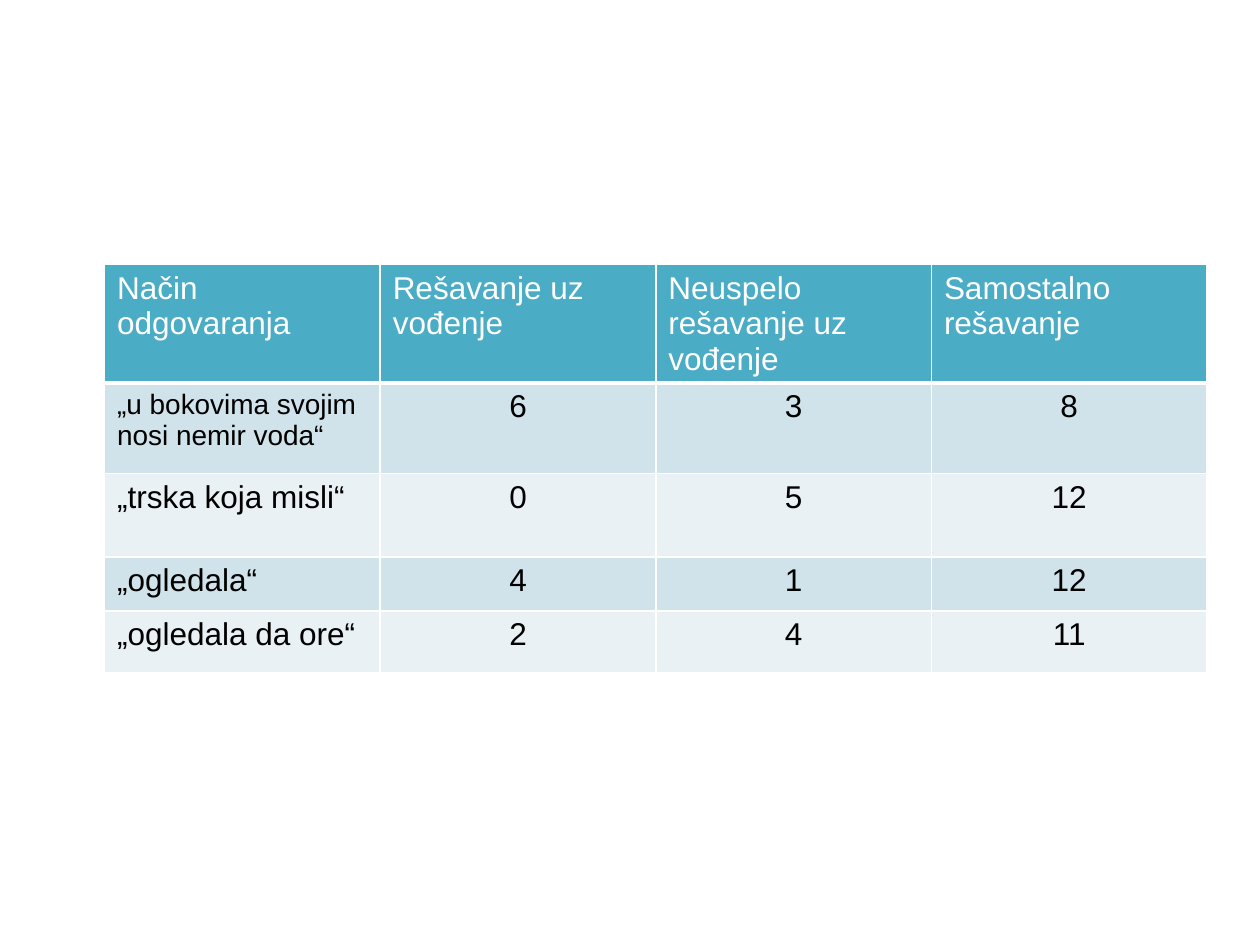
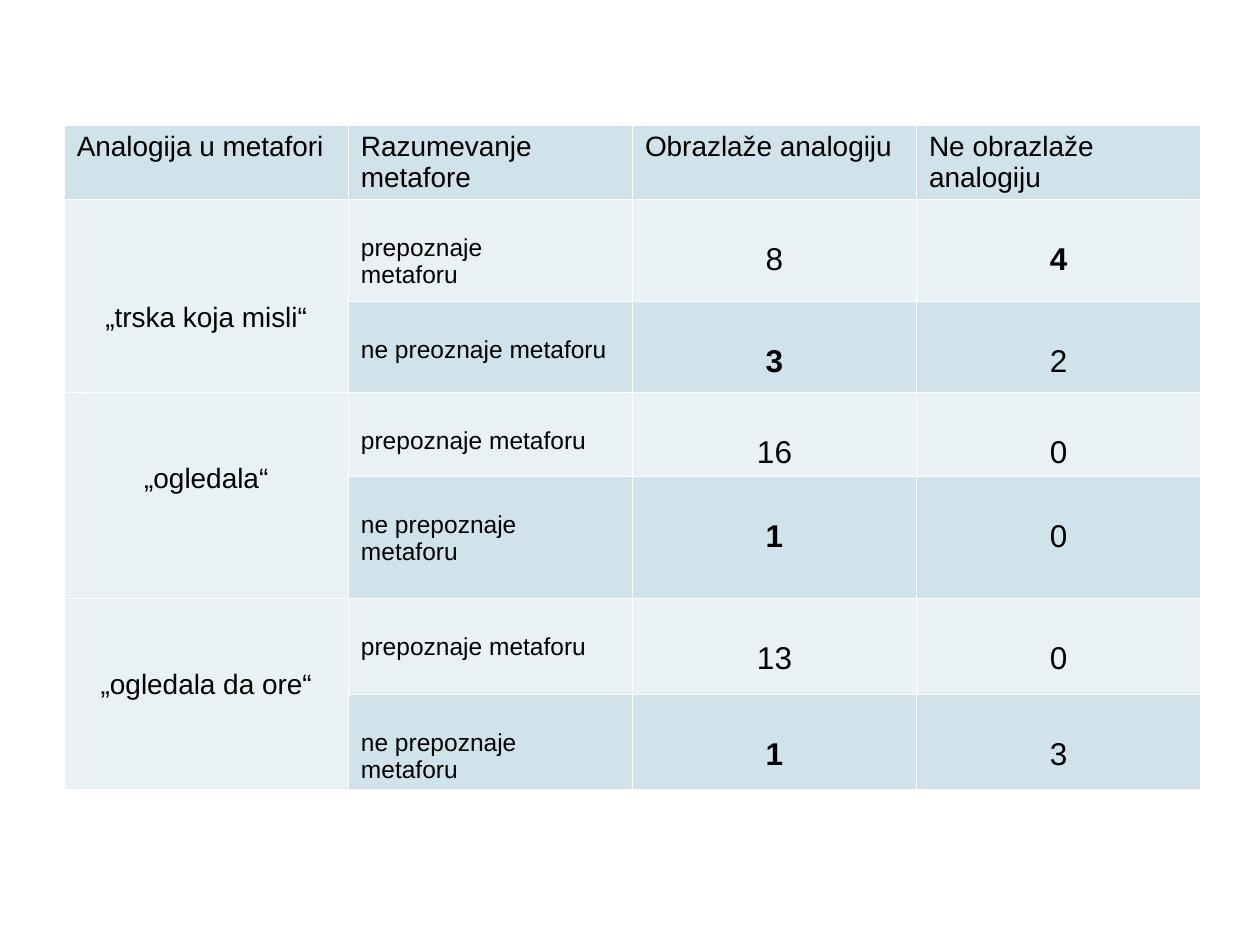
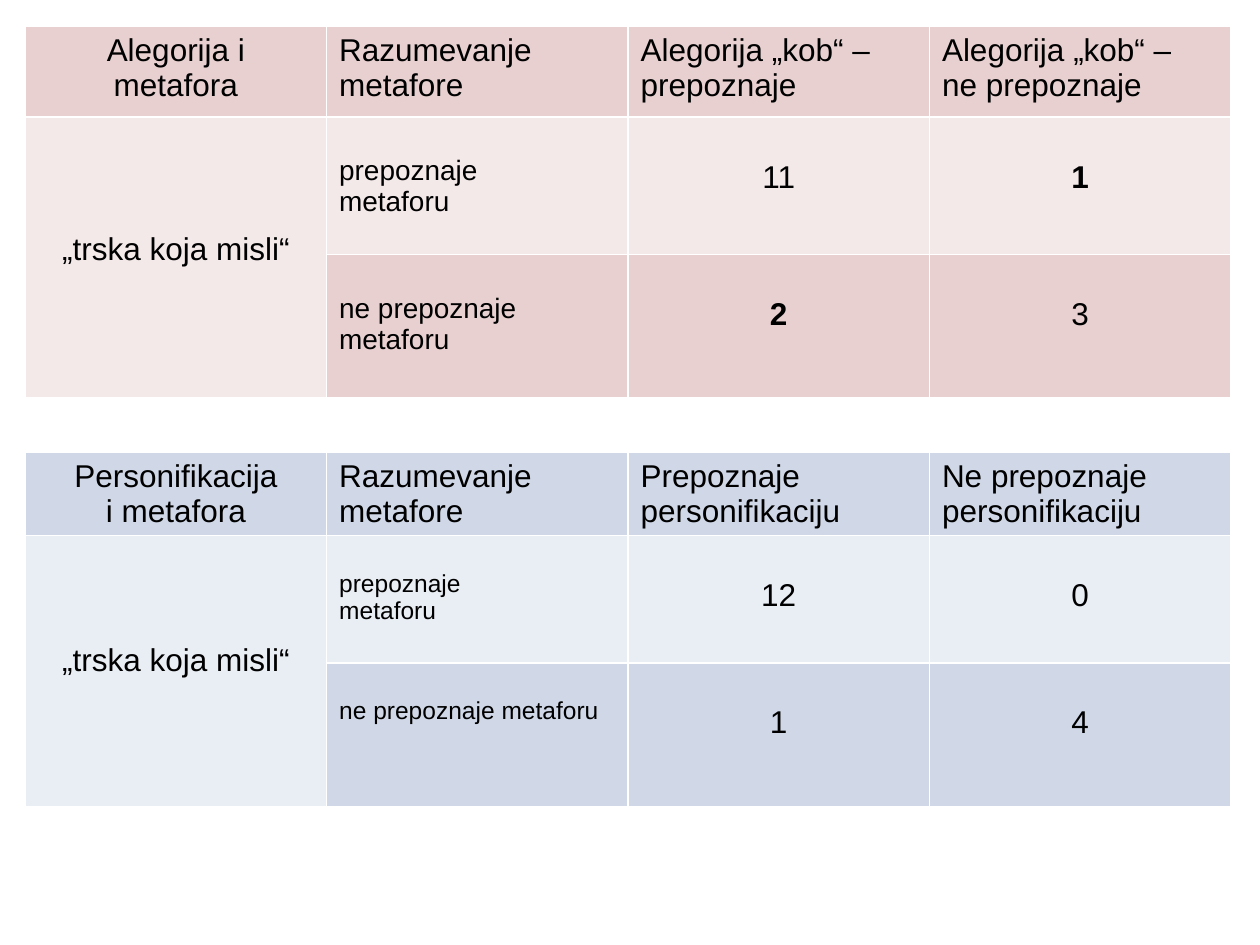
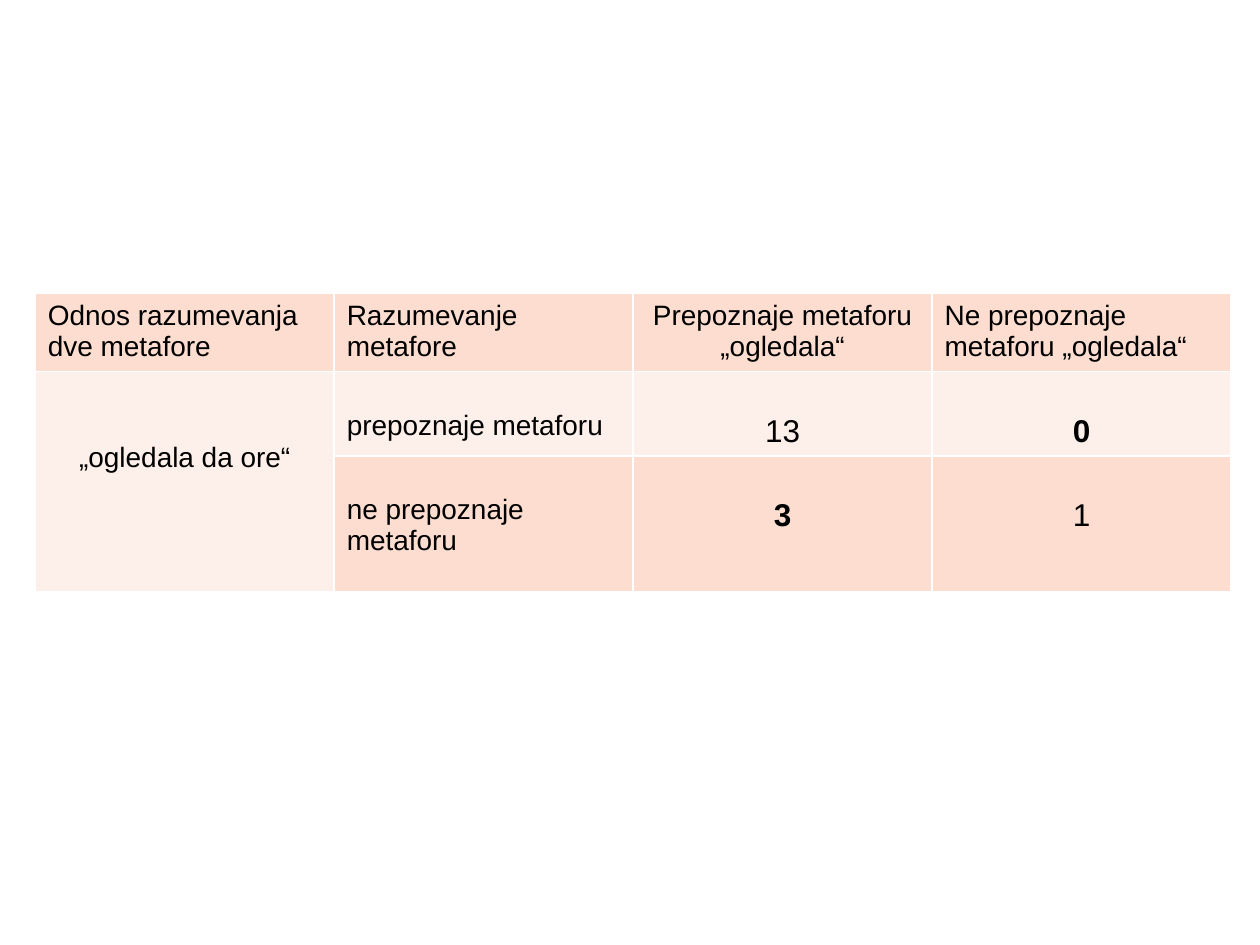
from dataclasses import dataclass
from typing import Optional

from lxml.etree import SubElement
from pptx import Presentation
from pptx.dml.color import RGBColor as Color
from pptx.enum.text import PP_ALIGN as Align
from pptx.oxml.ns import qn
from pptx.util import Inches, Pt

GRID_COLUMNS, GRID_ROWS = 100, 75
TABLE_COLUMNS = 4


@dataclass(frozen=True)
class Palette:
    dark: str
    light: str


@dataclass(frozen=True)
class Theme:
    font: str = "Arial"
    ink: str = "000000"
    paper: str = "FFFFFF"
    accent: str = "4BACC6"
    teal: Palette = Palette("D0E3EA", "E9F1F5")
    rose: Palette = Palette("E8D0D0", "F4E9E9")
    blue: Palette = Palette("D0D8E8", "E9EDF4")
    peach: Palette = Palette("FCDDCF", "FDEFE9")
    large: int = 18
    medium: int = 16
    small: int = 14
    line_height: float = 1.15
    thin_border: int = 1
    thick_border: int = 3


@dataclass
class Entry:
    """One table cell; lead is the space above its text, in lines."""
    text: str
    size: int
    fill: str
    ink: str = Theme.ink
    centred: bool = False
    bold: bool = False
    lead: float = 0
    row_span: int = 1


@dataclass
class Group:
    """A metaphor with its (understanding, first count, second count) rows."""
    metaphor: str
    lead: float
    rows: list


class Deck:
    def __init__(self, theme):
        self.theme = theme
        self.presentation = Presentation()
        self.presentation.slide_width = Inches(10)
        self.presentation.slide_height = Inches(7.5)
        self.column = self.presentation.slide_width / GRID_COLUMNS
        self.row = self.presentation.slide_height / GRID_ROWS
        self.slide = None

    def add_slide(self):
        self.slide = self.presentation.slides.add_slide(self.presentation.slide_layouts[6])

    def add_table(self, left, top, width, heights, entries, header_rule=Theme.thin_border):
        """Draw rows of entries; None marks a place covered by a row span."""
        frame = self.slide.shapes.add_table(
            len(entries), TABLE_COLUMNS, round(left * self.column), round(top * self.row),
            round(width * self.column), round(sum(heights) * self.row))
        table = frame.table
        table.first_row = table.horz_banding = False
        for table_row, height in zip(table.rows, heights):
            table_row.height = round(height * self.row)
        for row_index, entry_row in enumerate(entries):
            top_rule = header_rule if row_index == 1 else self.theme.thin_border
            bottom_rule = header_rule if row_index == 0 else self.theme.thin_border
            for column_index, entry in enumerate(entry_row):
                cell = table.cell(row_index, column_index)
                self.add_borders(cell, top_rule, bottom_rule)
                if entry is None:
                    continue
                if entry.row_span > 1:
                    cell.merge(table.cell(row_index + entry.row_span - 1, column_index))
                self.fill_cell(cell, entry)

    def add_borders(self, cell, top_rule, bottom_rule):
        properties = cell._tc.get_or_add_tcPr()
        thin = self.theme.thin_border
        for side, width in zip("LRTB", (thin, thin, top_rule, bottom_rule)):
            line = SubElement(properties, qn(f"a:ln{side}"), w=str(Pt(width)))
            solid = SubElement(line, qn("a:solidFill"))
            SubElement(solid, qn("a:srgbClr"), val=self.theme.paper)

    def fill_cell(self, cell, entry):
        cell.fill.solid()
        cell.fill.fore_color.rgb = Color.from_string(entry.fill)
        cell.margin_top = Inches(0.05) + Pt(entry.lead * entry.size * self.theme.line_height)
        cell.text_frame.text = entry.text
        for paragraph in cell.text_frame.paragraphs:
            paragraph.alignment = Align.CENTER if entry.centred else Align.LEFT
            for run in paragraph.runs:
                run.font.name = self.theme.font
                run.font.size = Pt(entry.size)
                run.font.bold = entry.bold
                run.font.color.rgb = Color.from_string(entry.ink)

    def add_answer_table(self, left, top, width, heights, headers, answers):
        theme = self.theme
        entries = [[Entry(text, theme.large, theme.accent, theme.paper) for text in headers]]
        for index, (label, label_size, *counts) in enumerate(answers):
            fill = theme.teal.light if index % 2 else theme.teal.dark
            entries.append([Entry(label, label_size, fill)] + [
                Entry(str(count), theme.large, fill, centred=True) for count in counts])
        self.add_table(left, top, width, heights, entries, theme.thick_border)

    def add_cross_table(self, left, top, width, heights, palette, headers, groups,
                        header_size, label_size, bold_counts=(),
                        centred_header: Optional[int] = None):
        """Cross understanding with a second trait; bold_counts holds (row, column) places."""
        entries = [[Entry(text, header_size, palette.dark, centred=index == centred_header)
                    for index, text in enumerate(headers)]]
        for group in groups:
            metaphor = Entry(group.metaphor, header_size, palette.light, centred=True,
                             lead=group.lead, row_span=len(group.rows))
            for index, (label, *counts) in enumerate(group.rows):
                fill = palette.dark if index % 2 else palette.light
                row_number = len(entries)
                entries.append([None if index else metaphor,
                                Entry(label, label_size, fill, lead=1)] + [
                    Entry(str(count), self.theme.large, fill, centred=True, lead=1,
                          bold=(row_number, column) in bold_counts)
                    for column, count in enumerate(counts, 1)])
        self.add_table(left, top, width, heights, entries)


def main():
    theme = Theme()
    deck = Deck(theme)
    understanding = "Razumevanje metafore"
    recognises, recognises_split = "prepoznaje metaforu", "prepoznaje\nmetaforu"
    misses = "ne prepoznaje metaforu"
    reed, mirrors, mirrors_plough = "„trska koja misli“", "„ogledala“", "„ogledala da ore“"
    diagonal = {(1, 2), (2, 1)}

    deck.add_slide()
    deck.add_answer_table(
        8.3, 21, 87.5, [9.4, 7.2, 6.6, 4.3, 4.9],
        ["Način odgovaranja", "Rešavanje uz vođenje",
         "Neuspelo rešavanje uz vođenje", "Samostalno rešavanje"],
        [("„u bokovima svojim nosi nemir voda“", theme.medium, 6, 3, 8),
         (reed, theme.large, 0, 5, 12),
         (mirrors, theme.large, 4, 1, 12),
         (mirrors_plough, theme.large, 2, 4, 11)])

    deck.add_slide()
    deck.add_cross_table(
        5.1, 9.9, 90.2, [5.9, 8.1, 7.2, 6.6, 9.7, 7.6, 7.5], theme.teal,
        ["Analogija u metafori", understanding, "Obrazlaže analogiju", "Ne obrazlaže analogiju"],
        [Group(reed, 3, [(recognises_split, 8, 4), ("ne preoznaje metaforu", 3, 2)]),
         Group(mirrors, 2, [(recognises, 16, 0), (misses, 1, 0)]),
         Group(mirrors_plough, 2, [(recognises, 13, 0), (misses, 1, 3)])],
        theme.medium, theme.small, diagonal | {(4, 1), (6, 1)})

    deck.add_slide()
    deck.add_cross_table(
        2, 2.1, 95.7, [7.2, 10.9, 11.4], theme.rose,
        ["Alegorija i\nmetafora", understanding,
         "Alegorija „kob“ –\nprepoznaje", "Alegorija „kob“ –\nne prepoznaje"],
        [Group(reed, 3, [(recognises_split, 11, 1), (misses, 2, 3)])],
        theme.large, theme.medium, diagonal, centred_header=0)
    deck.add_cross_table(
        2, 35.9, 95.7, [6.6, 10.1, 11.4], theme.blue,
        ["Personifikacija\ni metafora", understanding,
         "Prepoznaje personifikaciju", "Ne prepoznaje personifikaciju"],
        [Group(reed, 2.8, [(recognises_split, 12, 0), (misses, 1, 4)])],
        theme.large, theme.small, centred_header=0)

    deck.add_slide()
    deck.add_cross_table(
        2.8, 23.3, 94.9, [6.2, 6.6, 10.8], theme.peach,
        ["Odnos razumevanja dve metafore", understanding,
         "Prepoznaje metaforu\n„ogledala“", "Ne prepoznaje metaforu „ogledala“"],
        [Group(mirrors_plough, 2, [(recognises, 13, 0), (misses, 3, 1)])],
        theme.medium, theme.medium, diagonal, centred_header=2)

    deck.presentation.save("out.pptx")


if __name__ == "__main__":
    main()
